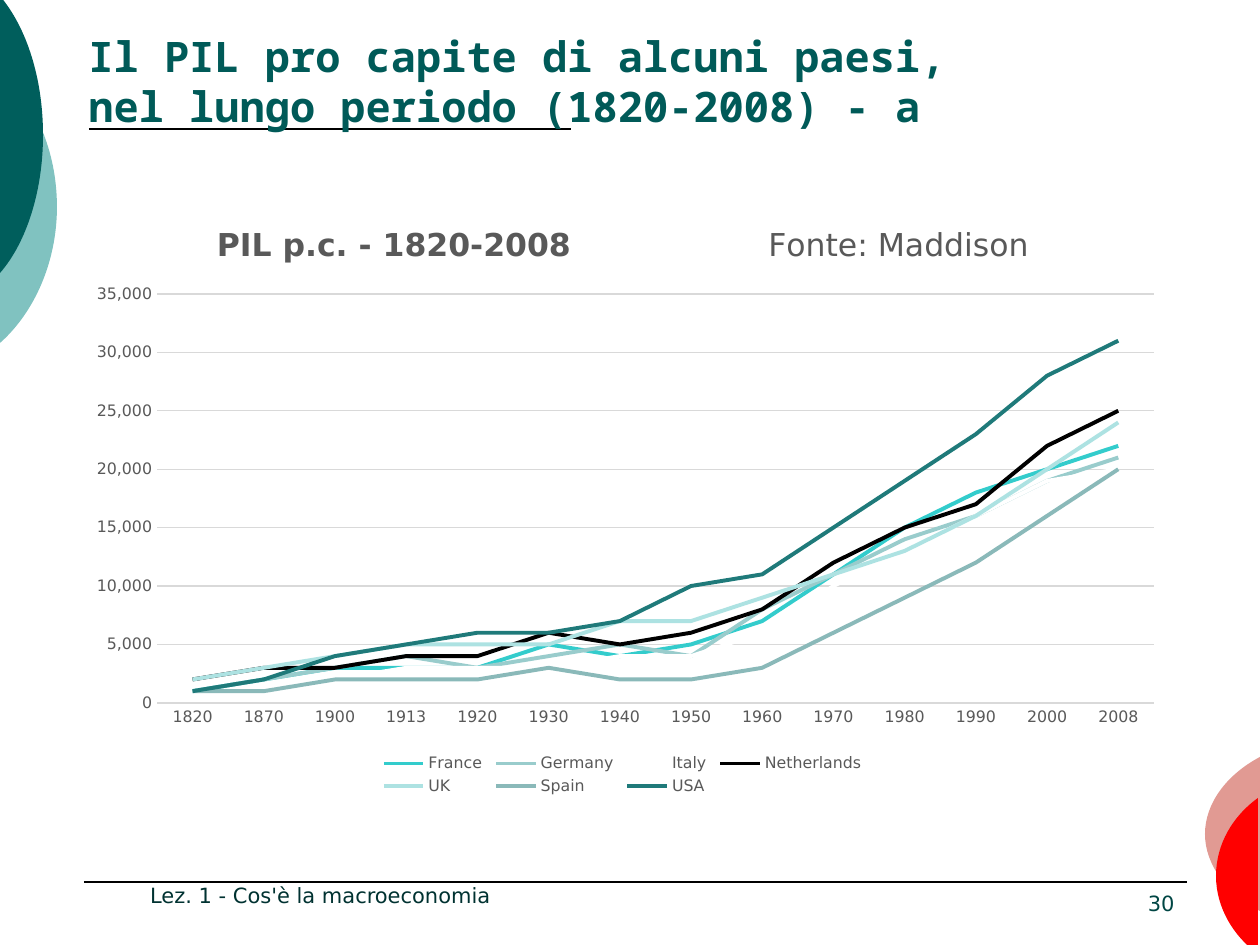
from dataclasses import dataclass

from lxml.etree import SubElement
from pptx import Presentation
from pptx.chart.data import CategoryChartData
from pptx.dml.color import RGBColor
from pptx.enum.chart import XL_CHART_TYPE, XL_LEGEND_POSITION, XL_TICK_MARK
from pptx.enum.shapes import MSO_CONNECTOR
from pptx.enum.text import MSO_ANCHOR, PP_ALIGN
from pptx.oxml import parse_xml
from pptx.oxml.ns import nsdecls, qn
from pptx.util import Pt

EMU_PER_PX = 914400 / 126
PAGE_WIDTH, PAGE_HEIGHT = 1260, 945
SANS, MONO = "DejaVu Sans", "Noto Sans Mono"
COLORS = {
    "title": "005A58", "footer": "003231", "number": "004644",
    "label": "595959", "grid": "D9D9D9", "rule": "000000",
    "light teal": "80C2C0", "dark teal": "005E5C",
    "pink": "E19A93", "red": "FF0000",
    "France": "33CCCC", "Germany": "99CCCC", "Italy": "FFFFFF",
    "Netherlands": "000000", "UK": "ADE2E2", "Spain": "8AB9B9", "USA": "1F7A7A",
}
YEARS = ["1820", "1870", "1900", "1913", "1920", "1930", "1940",
         "1950", "1960", "1970", "1980", "1990", "2000", "2008"]
# Income per head in thousands
INCOME = {
    "France": [1, 2, 3, 3, 3, 5, 4, 5, 7, 11, 15, 18, 20, 22],
    "Germany": [1, 2, 3, 4, 3, 4, 5, 4, 8, 11, 14, 16, 19, 21],
    "Italy": [1, 1, 2, 3, 3, 3, 4, 4, 6, 10, 13, 16, 19, 20],
    "Netherlands": [2, 3, 3, 4, 4, 6, 5, 6, 8, 12, 15, 17, 22, 25],
    "UK": [2, 3, 4, 5, 5, 5, 7, 7, 9, 11, 13, 16, 20, 24],
    "Spain": [1, 1, 2, 2, 2, 3, 2, 2, 3, 6, 9, 12, 16, 20],
    "USA": [1, 2, 4, 5, 6, 6, 7, 10, 11, 15, 19, 23, 28, 31],
}


@dataclass
class Frame:
    left: int
    top: int
    width: int
    height: int


@dataclass
class Arc:
    """A disc cut by a page edge: cubic curves from start to end."""
    color: str
    frame: Frame
    start: tuple
    curves: list


@dataclass
class Rule:
    left: int
    right: int
    top: int
    weight: float


@dataclass
class Label:
    lines: list
    frame: Frame
    size: int
    color: str
    align: PP_ALIGN
    font: str = SANS
    bold: bool = False
    bottom_inset: int = 6


ARCS = [
    Arc("light teal", Frame(-213, 39, 271, 334), (0, 69),
        [((35, 101), (57, 151), (57, 207)), ((57, 261), (35, 312), (0, 343))]),
    Arc("dark teal", Frame(-160, -34, 203, 336), (0, -4),
        [((27, 28), (43, 79), (43, 135)), ((43, 190), (27, 242), (0, 273))]),
    Arc("pink", Frame(1205, 741, 257, 186), (1260, 911),
        [((1226, 893), (1205, 864), (1205, 834)), ((1205, 804), (1226, 775), (1260, 757))]),
    Arc("red", Frame(1216, 781, 193, 189), (1258, 954),
        [((1233, 936), (1216, 907), (1216, 876)), ((1216, 844), (1233, 816), (1258, 798))]),
]
RULES = [Rule(89, 571, 129, 1), Rule(84, 1187, 882, 0.75)]
LABELS = [
    Label(["Il PIL pro capite di alcuni paesi,", "nel lungo periodo (1820-2008) - a"],
          Frame(76, 63, 1164, 123), 24, "title", PP_ALIGN.LEFT, MONO, True, 55),
    Label(["Lez. 1 - Cos'è la macroeconomia"], Frame(53, 882, 535, 32), 12, "footer",
          PP_ALIGN.CENTER),
    Label(["30"], Frame(1027, 859, 160, 63), 12, "number", PP_ALIGN.RIGHT),
]
CHART = Frame(76, 205, 1101, 595)
PLOT = Frame(157, 294, 997, 409)
LEGEND = Frame(375, 750, 495, 50)
CHART_TITLE = (213, 221)
TITLE_GAP = 187


def px(length: float) -> int:
    return round(length * EMU_PER_PX)


def place(frame: Frame) -> tuple:
    return px(frame.left), px(frame.top), px(frame.width), px(frame.height)


def rgb(name: str) -> RGBColor:
    return RGBColor.from_string(COLORS[name])


def style_font(font, size: int, color: str, name: str = SANS, bold: bool = False) -> None:
    font.size, font.name, font.bold = Pt(size), name, bold
    font.color.rgb = rgb(color)


def draw_arc(page, arc: Arc) -> None:
    left, top = arc.frame.left, arc.frame.top
    right, bottom = left + arc.frame.width, top + arc.frame.height
    builder = page.shapes.build_freeform(left, top, scale=EMU_PER_PX)
    builder.add_line_segments([(right, top), (right, bottom), (left, bottom)], close=True)
    shape = builder.convert_to_shape()
    # Put the curves into the frame
    outline = shape._element.spPr.find(".//" + qn("a:path"))
    for child in list(outline):
        outline.remove(child)
    for tag, points in [("moveTo", [arc.start])] + [("cubicBezTo", c) for c in arc.curves]:
        segment = SubElement(outline, qn(f"a:{tag}"))
        for x, y in points:
            SubElement(segment, qn("a:pt"), x=str(x - left), y=str(y - top))
    SubElement(outline, qn("a:close"))
    shape.shadow.inherit = False
    shape.fill.solid()
    shape.fill.fore_color.rgb = rgb(arc.color)
    shape.line.fill.background()


def draw_rule(page, rule: Rule) -> None:
    line = page.shapes.add_connector(MSO_CONNECTOR.STRAIGHT, px(rule.left), px(rule.top),
                                     px(rule.right), px(rule.top))
    line.line.color.rgb = rgb("rule")
    line.line.width = Pt(rule.weight)
    SubElement(line._element.spPr, qn("a:effectLst"))


def draw_label(page, label: Label) -> None:
    box = page.shapes.add_textbox(*place(label.frame))
    frame = box.text_frame
    frame.word_wrap = True
    frame.vertical_anchor = MSO_ANCHOR.BOTTOM
    frame.margin_bottom = px(label.bottom_inset)
    para = frame.paragraphs[0]
    para.alignment = label.align
    for index, line in enumerate(label.lines):
        if index:
            para.add_line_break()
        span = para.add_run()
        span.text = line
        style_font(span.font, label.size, label.color, label.font, label.bold)


def manual_layout(left: int, top: int, width: int = 0, height: int = 0, target: str = ""):
    """Layout element placing a chart part given in page px."""
    shares = {"x": (left - CHART.left) / CHART.width, "y": (top - CHART.top) / CHART.height}
    if width:
        shares |= {"w": width / CHART.width, "h": height / CHART.height}
    modes = '<c:xMode val="edge"/><c:yMode val="edge"/>'
    values = "".join(f'<c:{key} val="{share:.4f}"/>' for key, share in shares.items())
    return parse_xml(f'<c:layout {nsdecls("c")}><c:manualLayout>'
                     f'{target}{modes}{values}</c:manualLayout></c:layout>')


def draw_chart(page) -> None:
    data = CategoryChartData(number_format="#,##0")
    data.categories = YEARS
    for country, thousands in INCOME.items():
        data.add_series(country, [value * 1000 for value in thousands])
    chart = page.shapes.add_chart(XL_CHART_TYPE.LINE, *place(CHART), data).chart
    style_font(chart.font, 9, "label")
    chart.plots[0].vary_by_categories = False
    for series in chart.plots[0].series:
        series.smooth = False
        series.format.line.color.rgb = rgb(series.name)
        series.format.line.width = Pt(2.25)

    # Title: a widely spaced blank sets the source apart
    chart.has_title = True
    para = chart.chart_title.text_frame.paragraphs[0]
    for text, bold in [("PIL p.c. - 1820-2008", True), (" ", False), ("Fonte: Maddison", False)]:
        span = para.add_run()
        span.text = text
        style_font(span.font, 18, "label", bold=bold)
        if text == " ":
            span.font._element.set("spc", str(round(TITLE_GAP * 72 / 126 * 100)))

    # Legend
    chart.has_legend = True
    chart.legend.position = XL_LEGEND_POSITION.BOTTOM
    chart.legend.include_in_layout = False
    style_font(chart.legend.font, 9, "label")

    # Axes
    years, amounts = chart.category_axis, chart.value_axis
    amounts.minimum_scale, amounts.maximum_scale, amounts.major_unit = 0, 35000, 5000
    amounts.tick_labels.number_format = "#,##0"
    amounts.tick_labels.number_format_is_linked = False
    amounts.format.line.fill.background()
    for axis in (years, amounts):
        axis.major_tick_mark = axis.minor_tick_mark = XL_TICK_MARK.NONE
        style_font(axis.tick_labels.font, 9, "label")
    for part in (years, amounts.major_gridlines):
        part.format.line.color.rgb = rgb("grid")
        part.format.line.width = Pt(0.75)

    # Placement of the parts
    space = chart._chartSpace
    for old in space.xpath(".//c:layout"):
        old.getparent().remove(old)
    space.xpath("c:chart/c:title/c:tx")[0].addnext(manual_layout(*CHART_TITLE))
    space.xpath("c:chart/c:plotArea")[0].insert(0, manual_layout(
        PLOT.left, PLOT.top, PLOT.width, PLOT.height, '<c:layoutTarget val="inner"/>'))
    space.xpath("c:chart/c:legend/c:legendPos")[0].addnext(
        manual_layout(LEGEND.left, LEGEND.top, LEGEND.width, LEGEND.height))


def main() -> None:
    deck = Presentation()
    deck.slide_width, deck.slide_height = px(PAGE_WIDTH), px(PAGE_HEIGHT)
    page = deck.slides.add_slide(deck.slide_layouts[6])
    for arc in ARCS:
        draw_arc(page, arc)
    for rule in RULES:
        draw_rule(page, rule)
    for label in LABELS:
        draw_label(page, label)
    draw_chart(page)
    deck.save("out.pptx")


if __name__ == "__main__":
    main()
